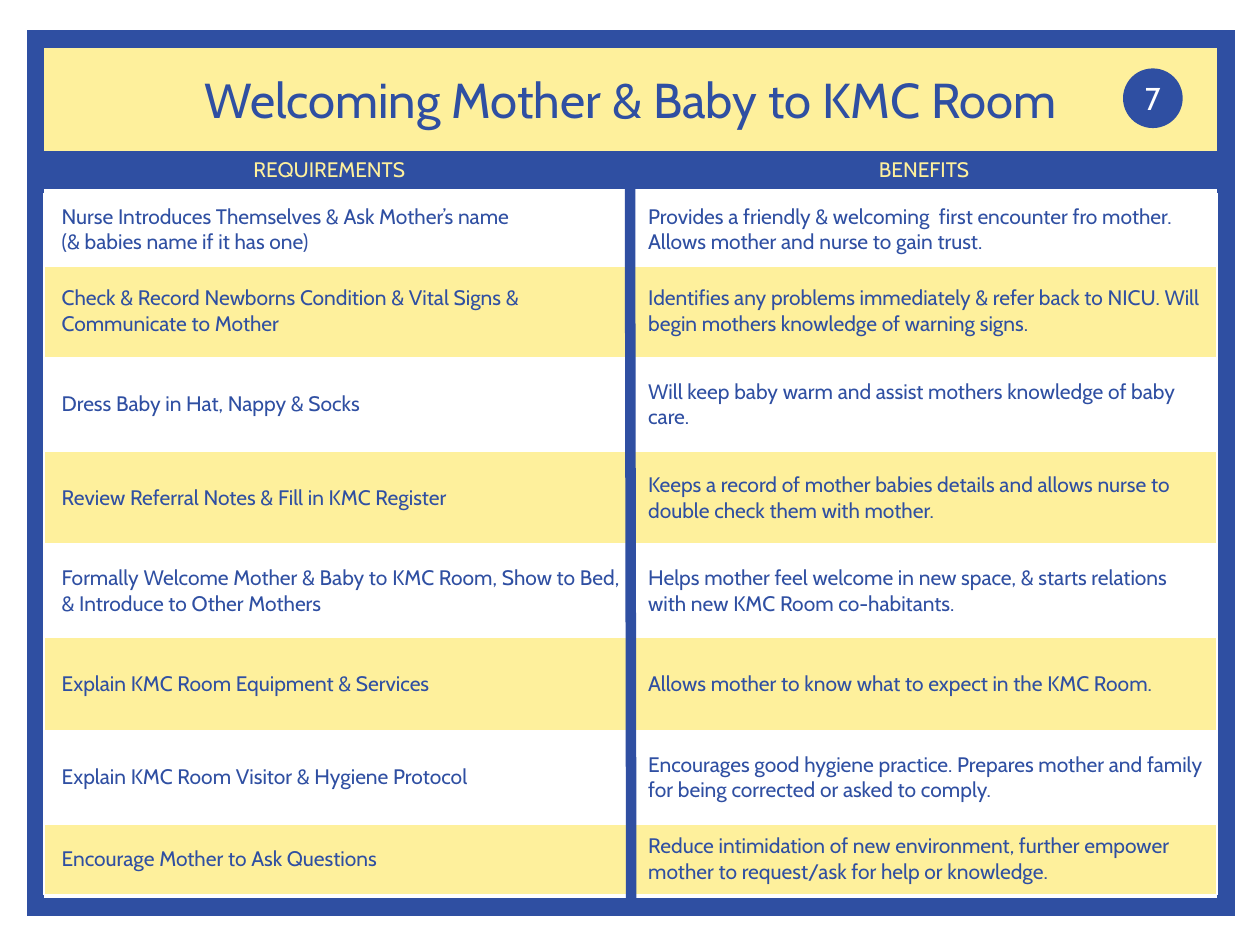
from dataclasses import dataclass

from lxml import etree
from pptx import Presentation
from pptx import util as u
from pptx.dml.color import RGBColor
from pptx.enum import shapes, text
from pptx.oxml import ns

BLUE, YELLOW, WHITE = "2F4FA2", "FEF09C", "FFFFFF"
FONT = "Cabin"


@dataclass
class Box:
    left: float
    top: float
    width: float
    height: float

    def lengths(self) -> list:
        return [u.Inches(value) for value in (self.left, self.top, self.width, self.height)]


@dataclass
class Step:
    requirement: str
    benefit: str
    height: float = 0.74


@dataclass
class Rule:
    start: tuple
    end: tuple


STEPS = [
    Step("Nurse Introduces Themselves & Ask Mother’s name\n(& babies name if it has one)",
         "Provides a friendly & welcoming  first encounter fro mother. "
         "Allows mother and nurse to gain trust.", 0.56),
    Step("Check & Record Newborns Condition & Vital Signs & Communicate to Mother",
         "Identifies any problems immediately & refer back to NICU. "
         "Will begin mothers knowledge of warning signs."),
    Step("Dress Baby in Hat, Nappy & Socks",
         "Will keep baby warm and assist mothers knowledge of baby care."),
    Step("Review Referral Notes & Fill in KMC Register",
         "Keeps a record of mother babies details and allows nurse to double check them with mother."),
    Step("Formally Welcome Mother & Baby to KMC Room, Show to Bed, & Introduce to Other Mothers",
         "Helps mother feel welcome in new space, & starts relations with new KMC Room co-habitants."),
    Step("Explain KMC Room Equipment & Services",
         "Allows mother to know what to expect in the KMC Room."),
    Step("Explain KMC Room Visitor & Hygiene Protocol",
         "Encourages good hygiene practice. Prepares mother and family "
         "for being corrected or asked to comply."),
    Step("Encourage Mother to Ask Questions",
         "Reduce intimidation of new environment, further empower mother "
         "to request/ask for help or knowledge.", 0.56),
]
HEADINGS = {"REQUIREMENTS": 0.28, "BENEFITS": 5}
RULES = [Rule((5, 1.46), (5.01, 7.15)), Rule((0.28, 1.46), (9.66, 1.46))]


def color(value: str) -> RGBColor:
    return RGBColor.from_string(value)


def set_values(target, values: dict) -> None:
    for name, value in values.items():
        setattr(target, name, value)


def write(frame, words: str, size: float, ink: str, align=text.PP_ALIGN.CENTER) -> None:
    set_values(frame, {"text": words, "word_wrap": True,
                       "vertical_anchor": text.MSO_ANCHOR.MIDDLE})
    for paragraph in frame.paragraphs:
        paragraph.alignment = align
        for run in paragraph.runs:
            set_values(run.font, {"name": FONT, "size": u.Pt(size), "bold": False})
            run.font.color.rgb = color(ink)


def add_shape(slide, kind, box: Box, fill: str = "", line: str = "", weight: float = 1):
    shape = slide.shapes.add_shape(kind, *box.lengths())
    shape.shadow.inherit = False
    if fill:
        shape.fill.solid()
        shape.fill.fore_color.rgb = color(fill)
    else:
        shape.fill.background()
    if line:
        shape.line.color.rgb = color(line)
        shape.line.width = u.Pt(weight)
        etree.SubElement(shape.line._get_or_add_ln(), ns.qn("a:miter"), lim="800000")
    else:
        shape.line.fill.background()
    return shape


def add_rule(slide, rule: Rule) -> None:
    points = [u.Inches(value) for value in rule.start + rule.end]
    connector = slide.shapes.add_connector(shapes.MSO_CONNECTOR.STRAIGHT, *points)
    connector.line.color.rgb = color(BLUE)
    connector.line.width = u.Pt(6)
    etree.SubElement(connector.element.spPr, ns.qn("a:effectLst"))


def add_heading(slide, words: str, left: float) -> None:
    box = slide.shapes.add_textbox(*Box(left, 1.19, 4.67, 0.3).lengths())
    write(box.text_frame, words, 12, YELLOW)


def add_borders(cell, bottom: float) -> None:
    properties = cell._tc.get_or_add_tcPr()
    weights = {"lnL": 1, "lnR": 1, "lnT": 1, "lnB": bottom}
    for position, (side, weight) in enumerate(weights.items()):
        border = etree.Element(ns.qn(f"a:{side}"), w=str(u.Pt(weight)))
        fill = etree.SubElement(border, ns.qn("a:solidFill"))
        etree.SubElement(fill, ns.qn("a:srgbClr"), val=WHITE)
        properties.insert(position, border)


def add_steps(slide, steps: list[Step]) -> None:
    box = Box(0.35, 1.54, 9.31, sum(step.height for step in steps))
    table = slide.shapes.add_table(len(steps), 2, *box.lengths()).table
    set_values(table, {"first_row": False, "horz_banding": False})
    margins = {"margin_left": u.Inches(0.14), "margin_right": u.Inches(0.07),
               "margin_top": u.Inches(0.04), "margin_bottom": u.Inches(0.04)}
    for index, step in enumerate(steps):
        table.rows[index].height = u.Inches(step.height)
        for column, words in enumerate((step.requirement, step.benefit)):
            cell = table.cell(index, column)
            set_values(cell, margins | {"vertical_anchor": text.MSO_ANCHOR.MIDDLE})
            write(cell.text_frame, words, 12, BLUE, text.PP_ALIGN.LEFT)
            cell.fill.solid()
            cell.fill.fore_color.rgb = color(YELLOW if index % 2 else WHITE)
            add_borders(cell, 1 if index else 3)


def place_title(slide, words: str, box: Box) -> None:
    title = slide.shapes.title
    set_values(title, dict(zip(("left", "top", "width", "height"), box.lengths())))
    write(title.text_frame, words, 28, BLUE)
    title.text_frame.auto_size = text.MSO_AUTO_SIZE.NONE
    title.element.getparent().append(title.element)


def main() -> None:
    presentation = Presentation()
    set_values(presentation, {"slide_width": u.Inches(10), "slide_height": u.Inches(7.5)})
    slide = presentation.slides.add_slide(presentation.slide_layouts[5])
    rectangle = shapes.MSO_SHAPE.RECTANGLE

    add_shape(slide, rectangle, Box(0.28, 0.31, 9.45, 1.18), fill=YELLOW)
    add_shape(slide, rectangle, Box(0.28, 0.31, 9.45, 6.89), line=BLUE, weight=10)
    add_shape(slide, rectangle, Box(0.28, 1.2, 9.45, 0.3), fill=BLUE)
    for words, left in HEADINGS.items():
        add_heading(slide, words, left)
    add_steps(slide, STEPS)
    place_title(slide, "Welcoming Mother & Baby to KMC Room", Box(0.28, 0.5, 9.45, 0.57))
    for rule in RULES:
        add_rule(slide, rule)
    badge = add_shape(slide, shapes.MSO_SHAPE.OVAL, Box(8.92, 0.55, 0.46, 0.46), BLUE, BLUE)
    write(badge.text_frame, "7", 18, WHITE)
    presentation.save("out.pptx")


if __name__ == "__main__":
    main()
